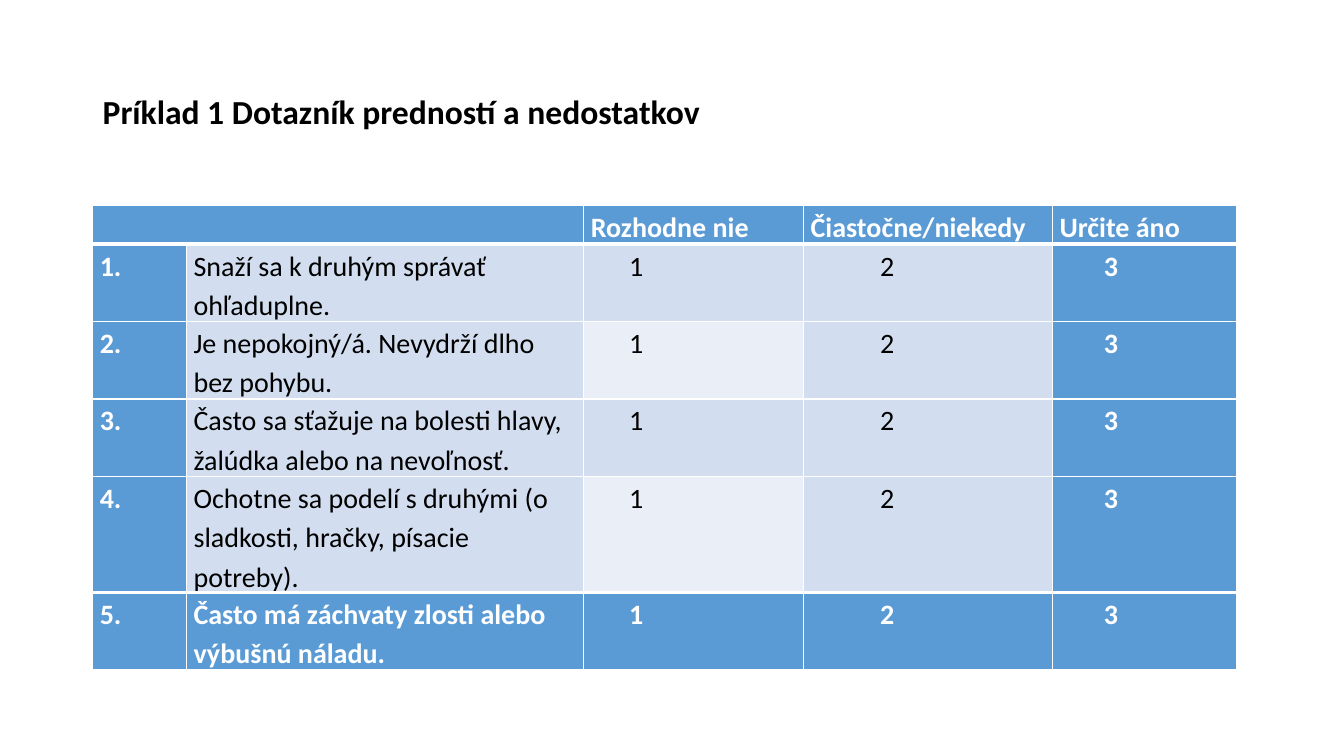
"""Build a slide with a five-item questionnaire table."""
from lxml.etree import SubElement
from pptx import Presentation
from pptx.dml.color import RGBColor
from pptx.enum.text import MSO_ANCHOR
from pptx.oxml import parse_xml
from pptx.oxml.ns import nsdecls
from pptx.util import Inches, Pt

TITLE = "Príklad 1 Dotazník predností a nedostatkov"
HEADER = ["", "", "Rozhodne nie", "Čiastočne/niekedy", "Určite áno"]
STATEMENTS = [
    "Snaží sa k druhým správať ohľaduplne.",
    "Je nepokojný/á. Nevydrží dlho bez pohybu.",
    "Často sa sťažuje na bolesti hlavy, žalúdka alebo na nevoľnosť.",
    "Ochotne sa podelí s druhými (o sladkosti, hračky, písacie potreby).",
    "Často má záchvaty zlosti alebo výbušnú náladu.",
]
ROWS = [HEADER] + [[f"{n}.", text, "1", "2", "3"]
                   for n, text in enumerate(STATEMENTS, 1)]
COL_WIDTHS = [0.93, 3.94, 2.18, 2.47, 1.83]
ROW_HEIGHTS = [0.38] + [0.44] * len(STATEMENTS)
INDENTS = [0, 0, 0.38, 0.69, 0.44]
LAST_ROW, LAST_COL = len(ROWS) - 1, len(HEADER) - 1

FONT = "Calibri"
BLACK = RGBColor(0x00, 0x00, 0x00)
WHITE = RGBColor(0xFF, 0xFF, 0xFF)
BLUE = RGBColor(0x5B, 0x9B, 0xD5)
BAND = RGBColor(0xD2, 0xDE, 0xEF)
PALE = RGBColor(0xEA, 0xEF, 0xF7)


def set_font(p, size, color, bold):
    p.font.name, p.font.size = FONT, Pt(size)
    p.font.color.rgb, p.font.bold = color, bold


def set_borders(cell, top, bottom):
    tc_pr = cell._tc.get_or_add_tcPr()
    widths = {"lnL": 1, "lnR": 1, "lnT": top, "lnB": bottom}
    for i, (tag, width) in enumerate(widths.items()):
        tc_pr.insert(i, parse_xml(
            f'<a:{tag} {nsdecls("a")} w="{Pt(width)}"><a:solidFill>'
            f'<a:srgbClr val="{WHITE}"/></a:solidFill></a:{tag}>'))


def fill_cell(cell, row, col, text):
    strong = row in (0, LAST_ROW) or col in (0, LAST_COL)
    color = BLUE if strong else PALE if col == 2 and row % 2 == 0 else BAND
    cell.fill.solid()
    cell.fill.fore_color.rgb = color
    cell.margin_left = cell.margin_right = Inches(0.07)
    cell.margin_top = cell.margin_bottom = 0
    p = cell.text_frame.paragraphs[0]
    p.text = text
    p.line_spacing = 1.15
    set_font(p, 20, WHITE if strong else BLACK, strong)
    if not text:
        SubElement(p._p, p._p.tag.replace("}p", "}endParaRPr"), sz="2000")
    if row and INDENTS[col]:
        p._p.get_or_add_pPr().set("marL", str(Inches(INDENTS[col])))
    set_borders(cell, 3 if row in (1, LAST_ROW) else 1,
                3 if row in (0, LAST_ROW - 1) else 1)


def add_title(slide):
    s = slide.shapes.add_textbox(Inches(0.92), Inches(0.4),
                                 Inches(11.5), Inches(1.45))
    tf = s.text_frame
    tf.word_wrap = True
    tf.vertical_anchor = MSO_ANCHOR.MIDDLE
    p = tf.paragraphs[0]
    p.text = TITLE
    p.line_spacing = 0.9
    set_font(p, 24, BLACK, True)


def add_questionnaire(slide):
    frame = slide.shapes.add_table(len(ROWS), len(HEADER), Inches(0.92),
                                   Inches(2.04), Inches(11.33), Inches(4.6))
    table = frame.table
    for column, width in zip(table.columns, COL_WIDTHS):
        column.width = Inches(width)
    for row, height in zip(table.rows, ROW_HEIGHTS):
        row.height = Inches(height)
    frame.height = Inches(4.6)
    for r, texts in enumerate(ROWS):
        for c, text in enumerate(texts):
            fill_cell(table.cell(r, c), r, c, text)
    table.cell(0, 0).merge(table.cell(0, 1))


def main():
    prs = Presentation()
    prs.slide_width, prs.slide_height = Inches(13.33), Inches(7.5)
    slide = prs.slides.add_slide(prs.slide_layouts[6])
    add_title(slide)
    add_questionnaire(slide)
    prs.save("out.pptx")


if __name__ == "__main__":
    main()
